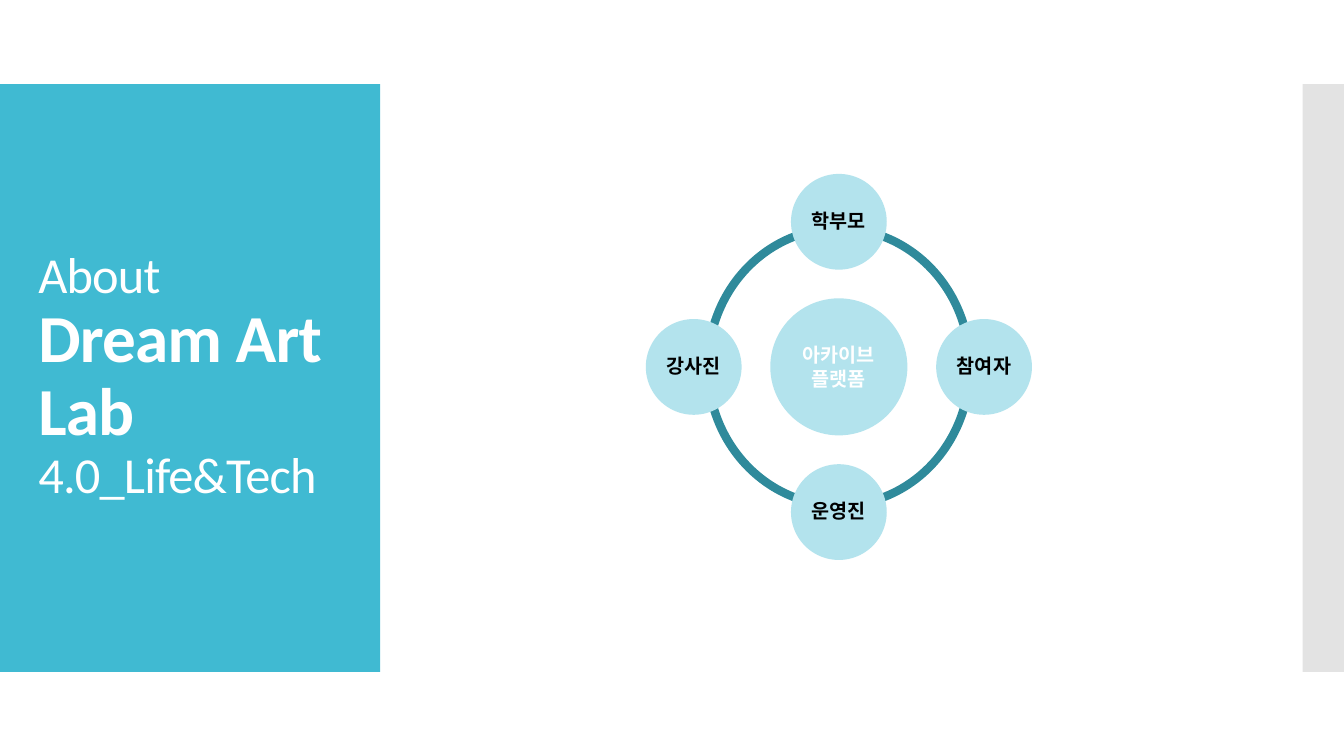
"""Build the Dream Art Lab slide with its ring of platform participants."""
from dataclasses import dataclass

from lxml import etree
from pptx import Presentation
from pptx.dml.color import RGBColor
from pptx.enum.shapes import MSO_SHAPE
from pptx.enum.text import MSO_ANCHOR, MSO_AUTO_SIZE, PP_ALIGN
from pptx.oxml.ns import qn
from pptx.util import Inches, Pt

RECT, OVAL = MSO_SHAPE.RECTANGLE, MSO_SHAPE.OVAL
MIDDLE, NO_FIT = MSO_ANCHOR.MIDDLE, MSO_AUTO_SIZE.NONE
LEFT, CENTER = PP_ALIGN.LEFT, PP_ALIGN.CENTER


@dataclass(frozen=True)
class Theme:
    panel: str = "40BAD2"
    strip: str = "C8C8C8"
    ring: str = "2F8A9B"
    bubble: str = "B3E3ED"
    white: str = "FFFFFF"
    black: str = "000000"
    latin: str = "Calibri"
    korean: str = "Noto Sans CJK KR"
    small: int = 36
    large: int = 48
    label: int = 14


def add_filled(shape_type, x, y, w, h, color):
    sp = slide.shapes.add_shape(shape_type, Inches(x), Inches(y), Inches(w), Inches(h))
    sp.shadow.inherit = False
    sp.fill.solid()
    sp.fill.fore_color.rgb = RGBColor.from_string(color)
    sp.line.fill.background()
    return sp


def style_run(r, font, size, color, bold):
    r.font.name, r.font.size, r.font.bold = font, Pt(size), bold
    r.font.color.rgb = RGBColor.from_string(color)


theme = Theme()
W, H = 13.33, 7.5
prs = Presentation()
prs.slide_width, prs.slide_height = Inches(W), Inches(H)
slide = prs.slides.add_slide(prs.slide_layouts[5])

band_top, band_height = H / 9, H * 7 / 9
add_filled(RECT, 0, band_top, 3.77, band_height, theme.panel)
strip = add_filled(RECT, W - 0.41, band_top, 0.41, band_height, theme.strip)
strip_color = strip._element.spPr.find(qn("a:solidFill"))[0]
etree.SubElement(strip_color, qn("a:alpha"), val="50000")

title = slide.shapes.title
slide.shapes._spTree.append(title._element)
title.left, title.top = Inches(0.28), Inches(1.23)
title.width, title.height = Inches(3.22), Inches(5.03)
tf = title.text_frame
tf.word_wrap, tf.auto_size, tf.vertical_anchor = True, NO_FIT, MIDDLE
p = tf.paragraphs[0]
p.text = "About\vDream Art Lab\v4.0_Life&Tech"
p.alignment, p.line_spacing = LEFT, 0.9
sizes = (theme.small, theme.large, theme.small)
for r, size in zip(p.runs, sizes):
    style_run(r, theme.latin, size, theme.white, size == theme.large)
    r.font._element.set("spc", "-60")
for br, size in zip(p._p.findall(qn("a:br")), sizes):
    etree.SubElement(br, qn("a:rPr"), sz=str(size * 100))

cx, cy, orbit = 8.32, 3.64, 1.44
ring_w, ring_h = 2.6, 2.75
ring = add_filled(OVAL, cx - ring_w / 2, cy - ring_h / 2, ring_w, ring_h, theme.white)
ring.fill.background()
ring.line.color.rgb = RGBColor.from_string(theme.ring)
ring.line.width = Pt(6)

bubbles = [
    ("아카이브 플랫폼", 0, 0, 1.36, theme.white, 1.0),
    ("학부모", 0, -1, 0.95, theme.black, 0.9),
    ("참여자", 1, 0, 0.95, theme.black, 0.9),
    ("운영진", 0, 1, 0.95, theme.black, 0.9),
    ("강사진", -1, 0, 0.95, theme.black, 0.9),
]
for text, col, row, size, color, spacing in bubbles:
    x, y = cx + col * orbit - size / 2, cy + row * orbit - size / 2
    sp = add_filled(OVAL, x, y, size, size, theme.bubble)
    tf = sp.text_frame
    tf.word_wrap, tf.vertical_anchor = True, MIDDLE
    tf.margin_left = tf.margin_right = tf.margin_top = tf.margin_bottom = Inches(0.02)
    p = tf.paragraphs[0]
    p.text = text
    p.alignment, p.line_spacing = CENTER, spacing
    r = p.runs[0]
    style_run(r, theme.korean, theme.label, color, True)
    etree.SubElement(r.font._element, qn("a:ea"), typeface=theme.korean)

prs.save("out.pptx")
